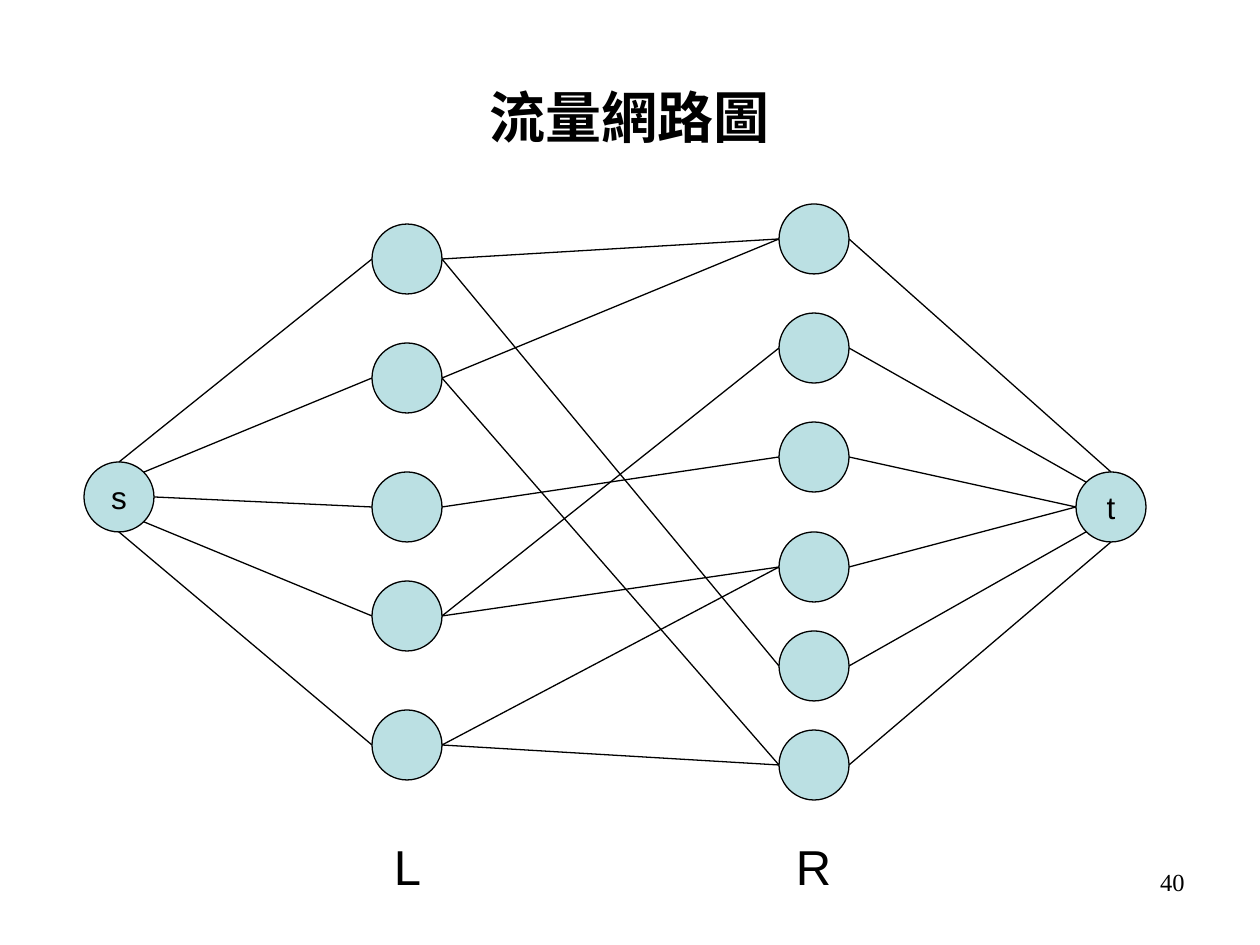
"""Draw a bipartite flow network from source s to sink t."""
from lxml import etree
from pptx import Presentation
from pptx import util as u
from pptx.dml.color import RGBColor
from pptx.enum import shapes, text
from pptx.oxml import ns

INK = {"line": "000000", "text": "000000", "node": "BBE0E3"}
SIZE = 70
PORT = {
    "n": (0, -1), "s": (0, 1), "e": (1, 0), "w": (-1, 0),
    "ne": (0.71, -0.71), "se": (0.71, 0.71),
    "nw": (-0.71, -0.71), "sw": (-0.71, 0.71),
}


def px(num):
    return u.Emu(round(num * 914400 / 126))


def tint(name):
    return RGBColor.from_string(INK[name])


def port(node, side):
    return [mid + step * SIZE / 2 for mid, step in zip(node, PORT[side])]


class Deck:
    def __init__(self):
        self.prs = Presentation()
        self.prs.slide_width, self.prs.slide_height = px(1260), px(945)
        self.page = self.prs.slides.add_slide(self.prs.slide_layouts[5])

    def put(self, frame, words, size, font, align, bold=False):
        para = frame.paragraphs[0]
        para.alignment = align
        run = para.add_run()
        run.text = words
        run.font.size, run.font.name, run.font.bold = u.Pt(size), font, bold
        run.font.color.rgb = tint("text")

    def title(self, words, x, y, w, h):
        box = self.page.shapes.title
        box.left, box.top, box.width, box.height = map(px, (x, y, w, h))
        box.text_frame.vertical_anchor = text.MSO_ANCHOR.MIDDLE
        self.put(box.text_frame, words, 32, "Times New Roman",
                 text.PP_ALIGN.CENTER, True)

    def label(self, words, x, y, w, h, size, font, align):
        box = self.page.shapes.add_textbox(*map(px, (x, y, w, h)))
        box.text_frame.word_wrap = True
        self.put(box.text_frame, words, size, font, align)

    def node(self, mid, words=""):
        x, y = mid
        dot = self.page.shapes.add_shape(
            shapes.MSO_SHAPE.OVAL,
            *map(px, (x - SIZE / 2, y - SIZE / 2, SIZE, SIZE)))
        dot.shadow.inherit = False
        dot.fill.solid()
        dot.fill.fore_color.rgb = tint("node")
        dot.line.color.rgb = tint("line")
        dot.line.width = u.Pt(0.75)
        if words:
            frame = dot.text_frame
            frame.word_wrap = False
            frame.vertical_anchor = text.MSO_ANCHOR.MIDDLE
            self.put(frame, words, 18, "Arial", text.PP_ALIGN.CENTER)

    def edge(self, start, end):
        line = self.page.shapes.add_connector(
            shapes.MSO_CONNECTOR.STRAIGHT, *map(px, (*start, *end)))
        line.line.color.rgb = tint("line")
        line.line.width = u.Pt(0.75)
        etree.SubElement(line._element.spPr, ns.qn("a:effectLst"))


def main():
    deck = Deck()
    deck.title("流量網路圖", 63, 38, 1134, 157)
    deck.label("40", 903, 861, 294, 65, 14, "Times New Roman",
               text.PP_ALIGN.RIGHT)

    left = [(407, y) for y in (259, 378, 507, 616, 745)]
    right = [(814, y) for y in (239, 348, 457, 567, 666, 765)]
    source, sink = (119, 497), (1111, 507)
    for spot in left + right:
        deck.node(spot)
    deck.node(source, "s")
    deck.node(sink, "t")
    for name, x in (("L", 353), ("R", 759)):
        deck.label(name, x, 830, 109, 72, 28, "Arial", text.PP_ALIGN.CENTER)

    pairs = ((0, 0), (0, 4), (1, 0), (1, 5), (2, 2),
             (3, 1), (3, 3), (4, 3), (4, 5))
    for a, b in pairs:
        deck.edge(port(left[a], "e"), port(right[b], "w"))
    for spot, side in zip(left, ("n", "ne", "e", "se", "s")):
        deck.edge(port(source, side), port(spot, "w"))
    for spot, side in zip(right, ("n", "nw", "w", "w", "sw", "s")):
        deck.edge(port(spot, "e"), port(sink, side))
    deck.prs.save("out.pptx")


if __name__ == "__main__":
    main()
